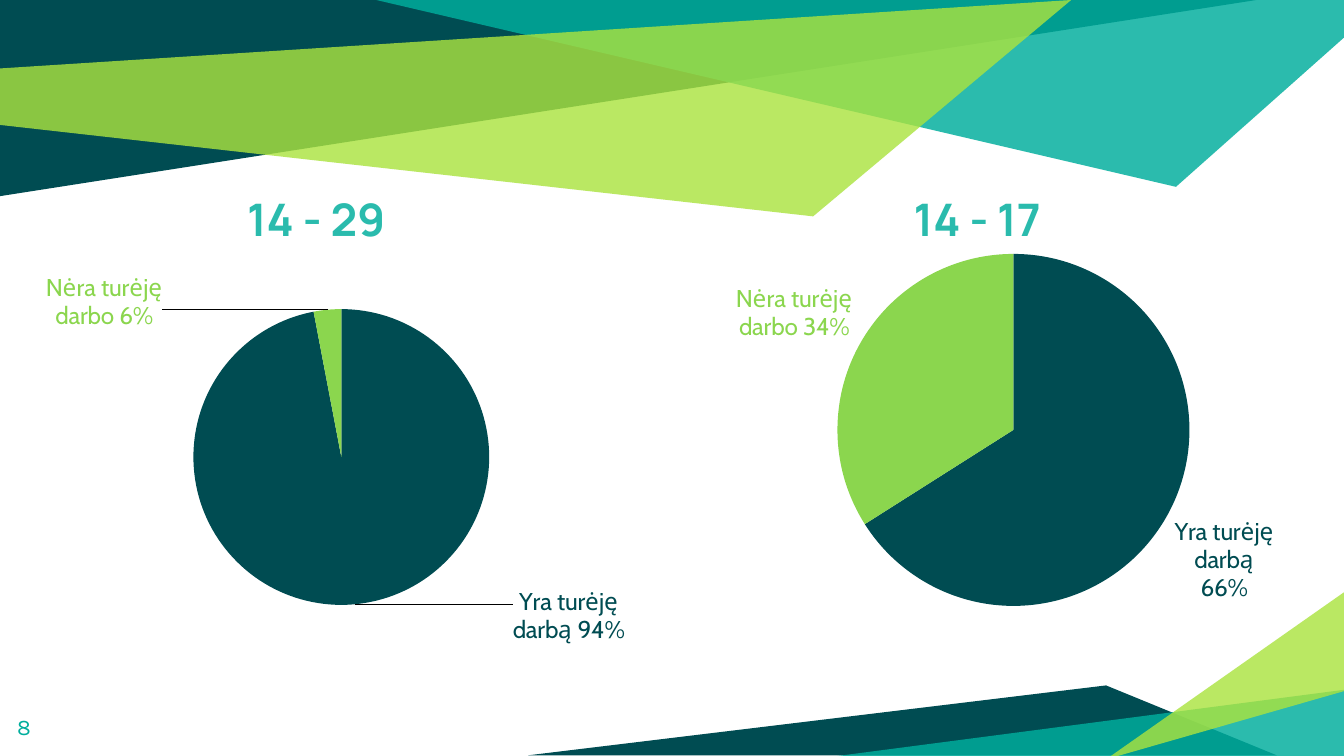
from lxml import etree
from pptx import Presentation
from pptx.chart.data import CategoryChartData
from pptx.dml.color import RGBColor
from pptx.enum.chart import XL_CHART_TYPE, XL_LABEL_POSITION
from pptx.enum.text import MSO_ANCHOR
from pptx.oxml.ns import qn
from pptx.util import Inches, Pt

PIE = XL_CHART_TYPE.PIE
OUTSIDE_END = XL_LABEL_POSITION.OUTSIDE_END
TOP, MIDDLE = MSO_ANCHOR.TOP, MSO_ANCHOR.MIDDLE

WIDTH = 10
HEIGHT = WIDTH * 9 / 16
UNITS = 100  # freeform corners are drawn in hundredths of an inch
THEME = {
    "dark": "004C52", "teal": "00AE9D", "lime": "ABE33F", "green": "8BD64E",
    "heading": "2ABBAD", "black": "000000", "leader": "A6A0A0",
    "heading_format": {"name": "Manrope", "size": Pt(24), "bold": True},
    "number_format": {"name": "Karla", "size": Pt(12), "bold": False},
    "chart_format": {"name": "Cabin", "size": Pt(10)},
    "label_format": {"name": "Cabin", "size": Pt(13)},
}

# Content: decorative bands as (colour, opacity in percent, corners)
BANDS = [
    ("dark", 100, [(0, 0), (0, 1.46), (9.35, 0)]),
    ("teal", 83, [(2.8, 0), (8.75, 1.39), (WIDTH, 0.28), (WIDTH, 0)]),
    ("lime", 81, [(-0.01, 0.51), (0, 0.93), (6.05, 1.61), (7.97, 0)]),
    ("dark", 100, [(3.93, HEIGHT), (9.5, HEIGHT), (8.23, 5.1)]),
    ("teal", 83, [(10.02, 5.13), (10.02, 5.65), (6.04, 5.65)]),
    ("lime", 81, [(10.01, 5.14), (10.01, 4.4), (8.23, 5.65)]),
]
CATEGORIES = ["Yra turėję darbą", "Nėra turėję darbo"]
SLICE_COLOURS = ["dark", "green"]
# Label shifts are shares of the chart's width and height
AGE_GROUPS = [
    {"title": "14 - 29", "title_left": 1.74, "values": [97, 3],
     "labels": [["Yra turėję darbą 94%"], ["Nėra turėję darbo 6%"]],
     "shifts": [(0.21, -0.05), (-0.22, 0.06)],
     "box": (-0.24, 1.66, 5.56, 3.5), "centre": (2.54, 3.4), "radius": 1.1},
    {"title": "14 - 17", "title_left": 6.7, "values": [66, 34],
     "labels": [["Yra turėję darbą", "66%"], ["Nėra turėję darbo 34%"]],
     "shifts": [None, None],
     "box": (4.72, 1.66, 5.21, 3.54), "centre": (7.54, 3.2), "radius": 1.31},
]
PAGE_NUMBER = "8"


def colour(name):
    return RGBColor.from_string(THEME[name])


def apply_format(font, format_name, colour_name):
    for attribute, value in THEME[format_name].items():
        setattr(font, attribute, value)
    font.color.rgb = colour(colour_name)


def add_band(slide, colour_name, opacity, corners):
    points = [(x * UNITS, y * UNITS) for x, y in corners]
    builder = slide.shapes.build_freeform(*points[0], scale=Inches(1) / UNITS)
    builder.add_line_segments(points[1:], close=True)
    shape = builder.convert_to_shape()
    shape.shadow.inherit = False
    shape.line.fill.background()
    shape.fill.solid()
    shape.fill.fore_color.rgb = colour(colour_name)
    if opacity < 100:
        for fill_colour in shape.fill._xPr.iter(qn("a:srgbClr")):
            alpha = etree.SubElement(fill_colour, qn("a:alpha"))
            alpha.set("val", str(opacity * 1000))


def add_text(slide, text, box, format_name, colour_name, anchor):
    shape = slide.shapes.add_textbox(*map(Inches, box))
    frame = shape.text_frame
    frame.word_wrap = True
    frame.vertical_anchor = anchor
    for side in ("left", "top", "right", "bottom"):
        setattr(frame, f"margin_{side}", Inches(0.1))
    run = frame.paragraphs[0].add_run()
    run.text = text
    apply_format(run.font, format_name, colour_name)


def manual_layout(settings):
    layout = etree.Element(qn("c:layout"))
    manual = etree.SubElement(layout, qn("c:manualLayout"))
    for tag, value in settings.items():
        etree.SubElement(manual, qn(f"c:{tag}")).set("val", str(value))
    return layout


def place_pie(chart, box, centre, radius):
    left, top, width, height = box
    plot_area = chart.plots[0]._element.getparent()
    for old_layout in plot_area.findall(qn("c:layout")):
        plot_area.remove(old_layout)
    plot_area.insert(0, manual_layout({
        "layoutTarget": "inner", "xMode": "edge", "yMode": "edge",
        "x": round((centre[0] - radius - left) / width, 3),
        "y": round((centre[1] - radius - top) / height, 3),
        "w": round(2 * radius / width, 3),
        "h": round(2 * radius / height, 3),
    }))


def add_pie(slide, group):
    data = CategoryChartData()
    data.categories = CATEGORIES
    data.add_series("Series 1", group["values"])
    frame = slide.shapes.add_chart(PIE, *map(Inches, group["box"]), data)
    chart = frame.chart
    chart.has_legend = False
    chart.has_title = False
    apply_format(chart.font, "chart_format", "black")
    chart.plots[0].vary_by_categories = True
    place_pie(chart, group["box"], group["centre"], group["radius"])

    # Leader lines take the colour of the series labels
    series = chart.plots[0].series[0]
    labels = series.data_labels
    labels.show_value = False
    labels.show_category_name = True
    labels.position = OUTSIDE_END
    apply_format(labels.font, "chart_format", "leader")

    parts = zip(group["labels"], SLICE_COLOURS, group["shifts"])
    for index, (lines, colour_name, shift) in enumerate(parts):
        point = series.points[index]
        point.format.fill.solid()
        point.format.fill.fore_color.rgb = colour(colour_name)
        point.format.line.fill.background()
        label = point.data_label
        label.text_frame.text = "\n".join(lines)
        for paragraph in label.text_frame.paragraphs:
            for run in paragraph.runs:
                apply_format(run.font, "label_format", colour_name)
        label.position = OUTSIDE_END
        if shift:
            element = series._element.xpath(
                f"c:dLbls/c:dLbl[c:idx/@val='{index}']")[0]
            element.insert(1, manual_layout(dict(zip("xy", shift))))


def main():
    presentation = Presentation()
    presentation.slide_width = Inches(WIDTH)
    presentation.slide_height = Inches(HEIGHT)
    slide = presentation.slides.add_slide(presentation.slide_layouts[6])

    # Background bands and page number
    for band in BANDS:
        add_band(slide, *band)
    add_text(slide, PAGE_NUMBER, (0.03, 5.19, 0.6, 0.43),
             "number_format", "teal", MIDDLE)

    # One heading and one pie for each age group
    for group in AGE_GROUPS:
        add_pie(slide, group)
        add_text(slide, group["title"], (group["title_left"], 1.33, 4.12, 0.78),
                 "heading_format", "heading", TOP)

    presentation.save("out.pptx")


if __name__ == "__main__":
    main()
